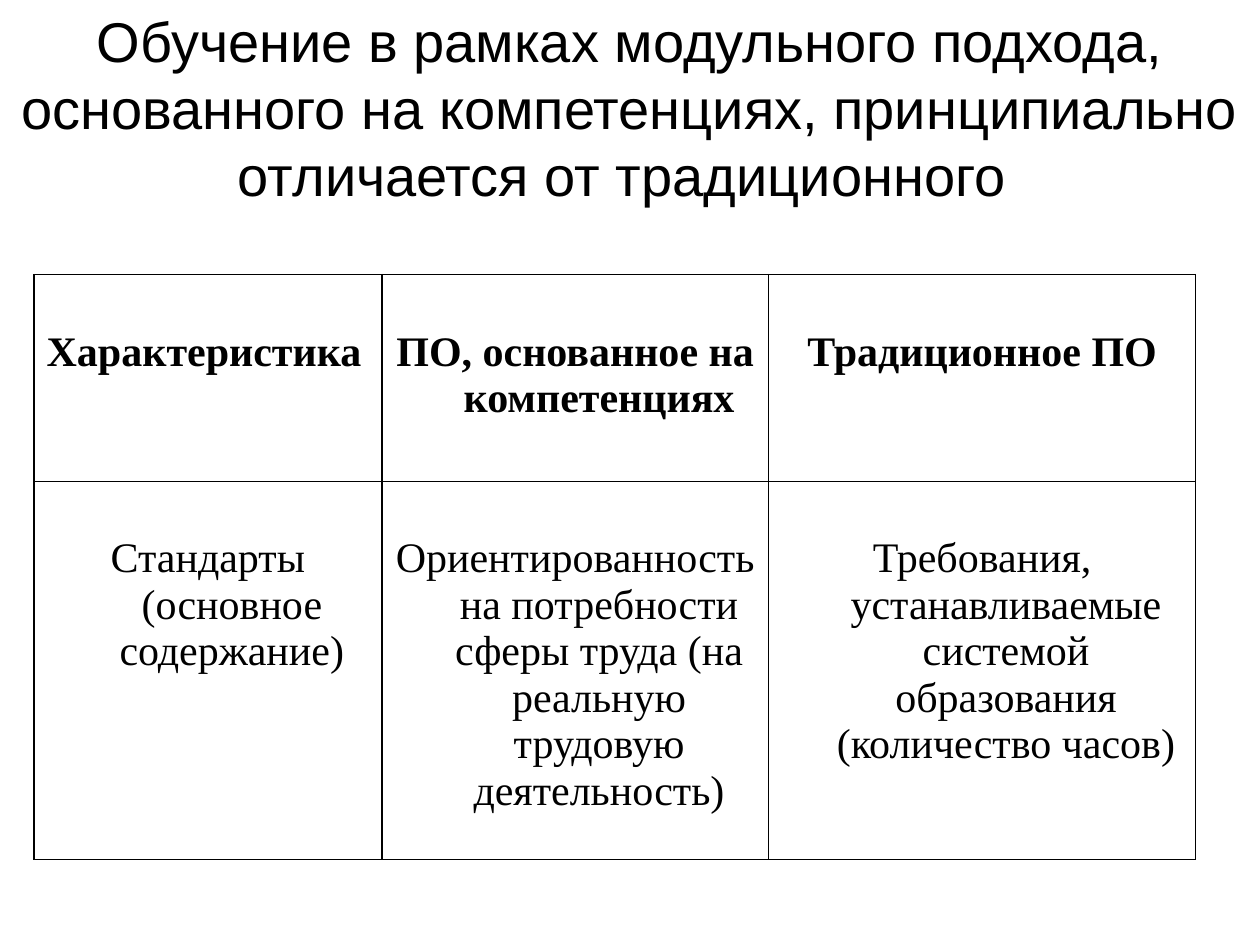
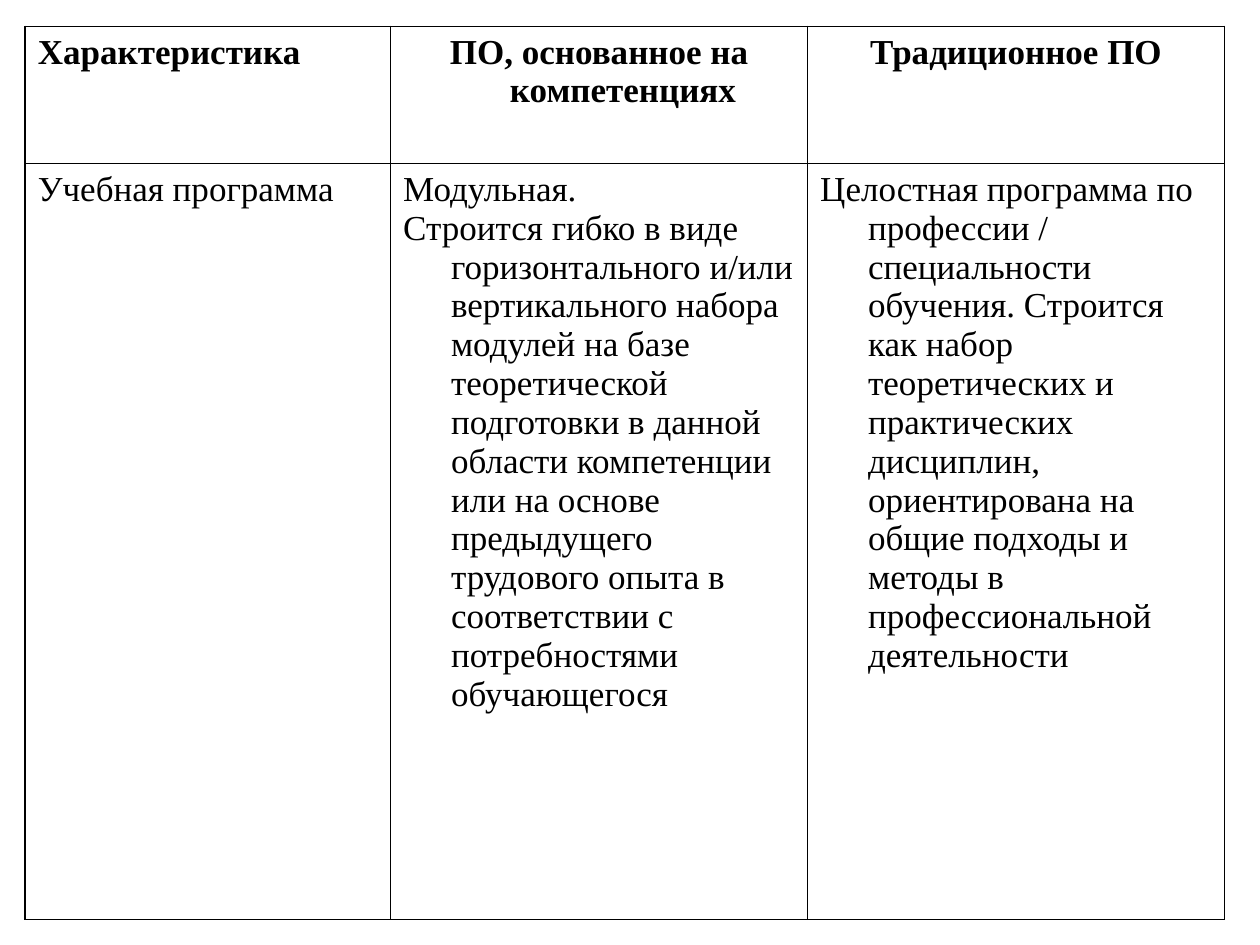
from lxml import etree
from pptx import Presentation
from pptx.dml.color import RGBColor
from pptx.enum.text import MSO_ANCHOR, MSO_AUTO_SIZE, PP_ALIGN
from pptx.oxml.ns import qn
from pptx.util import Inches, Pt

LEFT, CENTER, JUSTIFY = PP_ALIGN.LEFT, PP_ALIGN.CENTER, PP_ALIGN.JUSTIFY
MIDDLE = MSO_ANCHOR.MIDDLE
NO_FIT = MSO_AUTO_SIZE.NONE
TITLE_ONLY, BLANK = 5, 6
INK, PAPER = "000000", "FFFFFF"
HEAD = ["Характеристика", "ПО, основанное на компетенциях", "Традиционное ПО"]


def color(code):
    return RGBColor.from_string(code)


class Deck:
    title_font, body_font = "Arial", "Times New Roman"
    indent = 0.38
    edge = 1

    def __init__(self):
        self.prs = Presentation()
        self.prs.slide_width = Inches(10)
        self.prs.slide_height = Inches(7.5)

    def add_slide(self, layout):
        self.slide = self.prs.slides.add_slide(self.prs.slide_layouts[layout])
        fill = self.slide.background.fill
        fill.solid()
        fill.fore_color.rgb = color(PAPER)

    def style(self, para, font, size, align, bold=False):
        para.alignment = align
        for run in para.runs:
            run.font.name = font
            run.font.size = Pt(size)
            run.font.bold = bold
            run.font.color.rgb = color(INK)

    def title(self, text, height, size):
        box = self.slide.shapes.title
        box.left = box.top = Inches(0)
        box.width, box.height = self.prs.slide_width, Inches(height)
        frame = box.text_frame
        frame.text = text
        frame.word_wrap = True
        frame.auto_size = NO_FIT
        frame.vertical_anchor = MIDDLE
        self.style(frame.paragraphs[0], self.title_font, size, CENTER)

    def border(self, cell):
        props = cell._tc.get_or_add_tcPr()
        for spot, side in enumerate(("lnL", "lnR", "lnT", "lnB")):
            line = etree.Element(qn("a:" + side), w=str(Pt(self.edge)))
            fill = etree.SubElement(line, qn("a:solidFill"))
            etree.SubElement(fill, qn("a:srgbClr"), val=INK)
            props.insert(spot, line)

    def cell(self, cell, text, size, align, bold, top):
        cell.fill.background()
        cell.margin_top = Inches(top)
        cell.text_frame.text = text
        for para in cell.text_frame.paragraphs:
            self.style(para, self.body_font, size, align, bold)
            props = para._p.get_or_add_pPr()
            props.set("marL", str(Inches(self.indent)))
            props.set("indent", str(-Inches(self.indent)))
        self.border(cell)

    def table(self, left, top, widths, heights, row, size, align, pad=0.05):
        """Add the heading row and one body row; align is for the body cells."""
        grid = self.slide.shapes.add_table(
            2, len(HEAD), Inches(left), Inches(top),
            Inches(sum(widths)), Inches(sum(heights))).table
        for col, width in zip(grid.columns, widths):
            col.width = Inches(width)
        for line, height in zip(grid.rows, heights):
            line.height = Inches(height)
        aligns = ([JUSTIFY, CENTER, CENTER], align)
        for r, texts in enumerate((HEAD, row)):
            for c, text in enumerate(texts):
                self.cell(grid.cell(r, c), text, size, aligns[r][c], r == 0, pad)


def main():
    deck = Deck()

    deck.add_slide(TITLE_ONLY)
    deck.title("Обучение в рамках модульного подхода, основанного на "
               "компетенциях, принципиально отличается от традиционного ",
               1.7, 32)
    deck.table(0.27, 2.18, [2.76, 3.07, 3.39], [1.64, 3], [
        "Стандарты (основное содержание)",
        "Ориентированность на потребности сферы труда "
        "(на реальную трудовую деятельность)",
        "Требования, устанавливаемые системой образования (количество часов)",
    ], 24, [CENTER] * 3, pad=0.43)

    deck.add_slide(BLANK)
    deck.table(0.2, 0.21, [2.9, 3.31, 3.31], [1.09, 6], [
        "Учебная программа",
        "Модульная.\nСтроится гибко в виде горизонтального и/или вертикального "
        "набора модулей на базе теоретической подготовки в данной области "
        "компетенции или на основе предыдущего трудового опыта в соответствии "
        "с потребностями обучающегося",
        "Целостная программа по профессии / специальности обучения. Строится "
        "как набор теоретических и практических дисциплин, ориентирована на "
        "общие подходы и методы в профессиональной деятельности",
    ], 20, [JUSTIFY, LEFT, LEFT])

    deck.prs.save("out.pptx")


if __name__ == "__main__":
    main()
